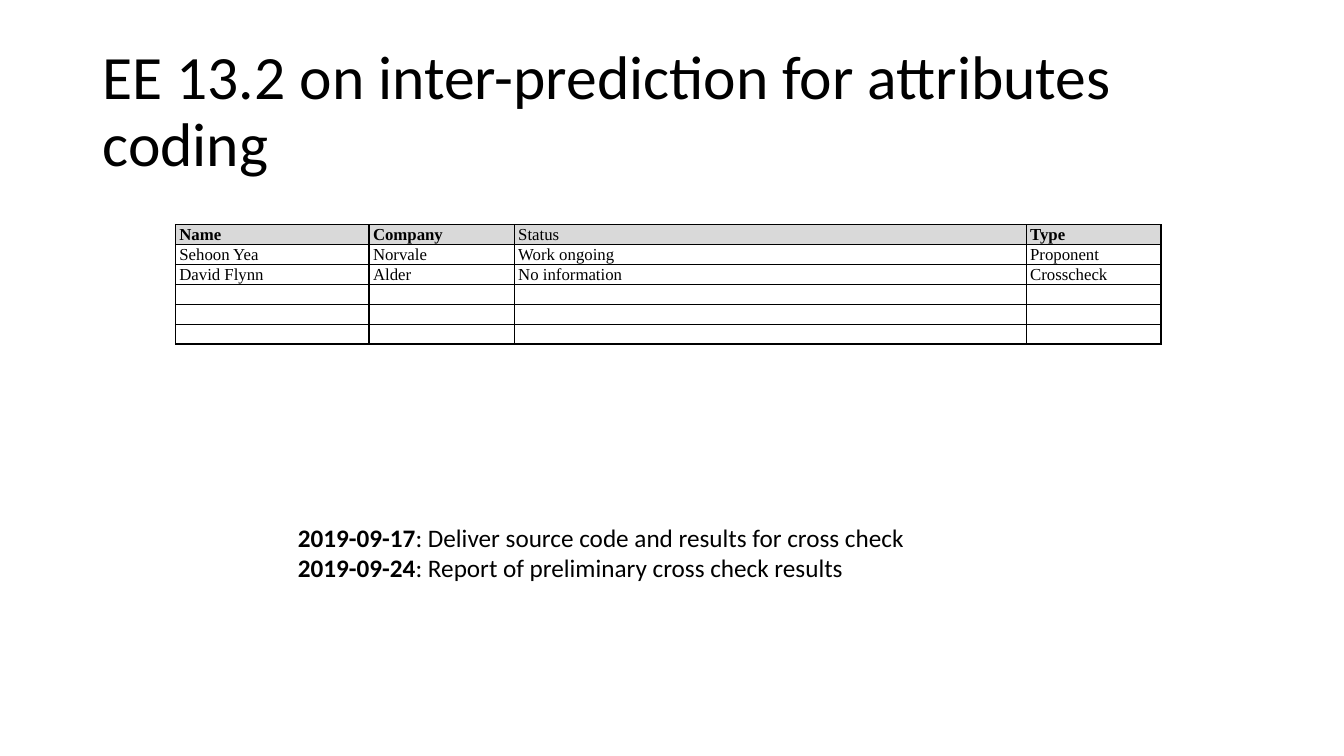
from lxml.etree import SubElement
from pptx import Presentation
from pptx.dml.color import RGBColor
from pptx.enum.text import MSO_ANCHOR, MSO_AUTO_SIZE, PP_ALIGN
from pptx.oxml.ns import qn
from pptx.util import Cm, Pt

BLACK = "000000"
HEADER_GREY = "D9D9D9"
COLUMN_WIDTHS = [4.88, 3.66, 12.9, 3.4]
ROW_HEIGHT = 0.5
EMPTY_ROW = [""] * len(COLUMN_WIDTHS)
PARTICIPANTS = [
    ["Name", "Company", "Status", "Type"],
    ["Sehoon Yea", "Norvale", "Work ongoing", "Proponent"],
    ["David Flynn", "Alder", "No information", "Crosscheck"],
] + [EMPTY_ROW] * 3
MILESTONES = [
    ("2019-09-17", "Deliver source code and results for cross check"),
    ("2019-09-24", "Report of preliminary cross check results"),
]


def color(hex_code):
    return RGBColor.from_string(hex_code)


def set_font(font, name, size, bold=None):
    font.name = name
    font.size = Pt(size)
    font.bold = bold
    font.color.rgb = color(BLACK)


def add_title(page, text, left, top, width, height):
    title = page.shapes.title
    title.left, title.top = Cm(left), Cm(top)
    title.width, title.height = Cm(width), Cm(height)
    frame = title.text_frame
    frame.text = text
    frame.auto_size = MSO_AUTO_SIZE.NONE
    frame.vertical_anchor = MSO_ANCHOR.MIDDLE
    paragraph = frame.paragraphs[0]
    paragraph.alignment = PP_ALIGN.LEFT
    paragraph.line_spacing = 0.9
    set_font(paragraph.font, "Calibri", 44)


def add_cell_borders(cell):
    """Draw a thin black line on all four sides; call before filling the cell."""
    properties = cell._tc.get_or_add_tcPr()
    for side in ("a:lnL", "a:lnR", "a:lnT", "a:lnB"):
        line = SubElement(properties, qn(side), w=str(Pt(1)))
        fill = SubElement(line, qn("a:solidFill"))
        SubElement(fill, qn("a:srgbClr"), val=BLACK)


def format_cell(cell, text, is_header, bold):
    cell.margin_left = cell.margin_right = Cm(0.1)
    cell.margin_top = cell.margin_bottom = 0
    add_cell_borders(cell)
    if is_header:
        cell.fill.solid()
        cell.fill.fore_color.rgb = color(HEADER_GREY)
    else:
        cell.fill.background()
    cell.text = text
    paragraph = cell.text_frame.paragraphs[0]
    paragraph.alignment = PP_ALIGN.JUSTIFY
    paragraph.line_spacing = 1.07
    set_font(paragraph.font, "Times New Roman", 12, bold)
    if not text:
        # An empty cell takes its line height from the end-of-paragraph size.
        SubElement(paragraph._p, qn("a:endParaRPr"), sz="1200")


def add_participants_table(page, rows, left, top):
    frame = page.shapes.add_table(
        len(rows), len(COLUMN_WIDTHS), Cm(left), Cm(top),
        Cm(sum(COLUMN_WIDTHS)), Cm(ROW_HEIGHT * len(rows)))
    table = frame.table
    for column, width in zip(table.columns, COLUMN_WIDTHS):
        column.width = Cm(width)
    for row_index, (row, texts) in enumerate(zip(table.rows, rows)):
        row.height = Cm(ROW_HEIGHT)
        is_header = row_index == 0
        for cell, text in zip(row.cells, texts):
            format_cell(cell, text, is_header, is_header and text != "Status")


def add_milestones(page, milestones, left, top, width, height):
    box = page.shapes.add_textbox(Cm(left), Cm(top), Cm(width), Cm(height))
    frame = box.text_frame
    frame.word_wrap = False
    for index, (date, task) in enumerate(milestones):
        paragraph = frame.add_paragraph() if index else frame.paragraphs[0]
        set_font(paragraph.font, "Calibri", 18)
        date_span = paragraph.add_run()
        date_span.text = date
        date_span.font.bold = True
        task_span = paragraph.add_run()
        task_span.text = f": {task}"


def main():
    deck = Presentation()
    deck.slide_width, deck.slide_height = Cm(33.87), Cm(19.05)
    title_only = deck.slide_layouts[5]
    page = deck.slides.add_slide(title_only)
    add_title(page, "EE 13.2 on inter-prediction for attributes coding",
              2.33, 1.01, 29.21, 3.68)
    add_participants_table(page, PARTICIPANTS, 4.42, 5.66)
    add_milestones(page, MILESTONES, 7.26, 13.03, 15.95, 2.57)
    deck.save("out.pptx")


if __name__ == "__main__":
    main()
